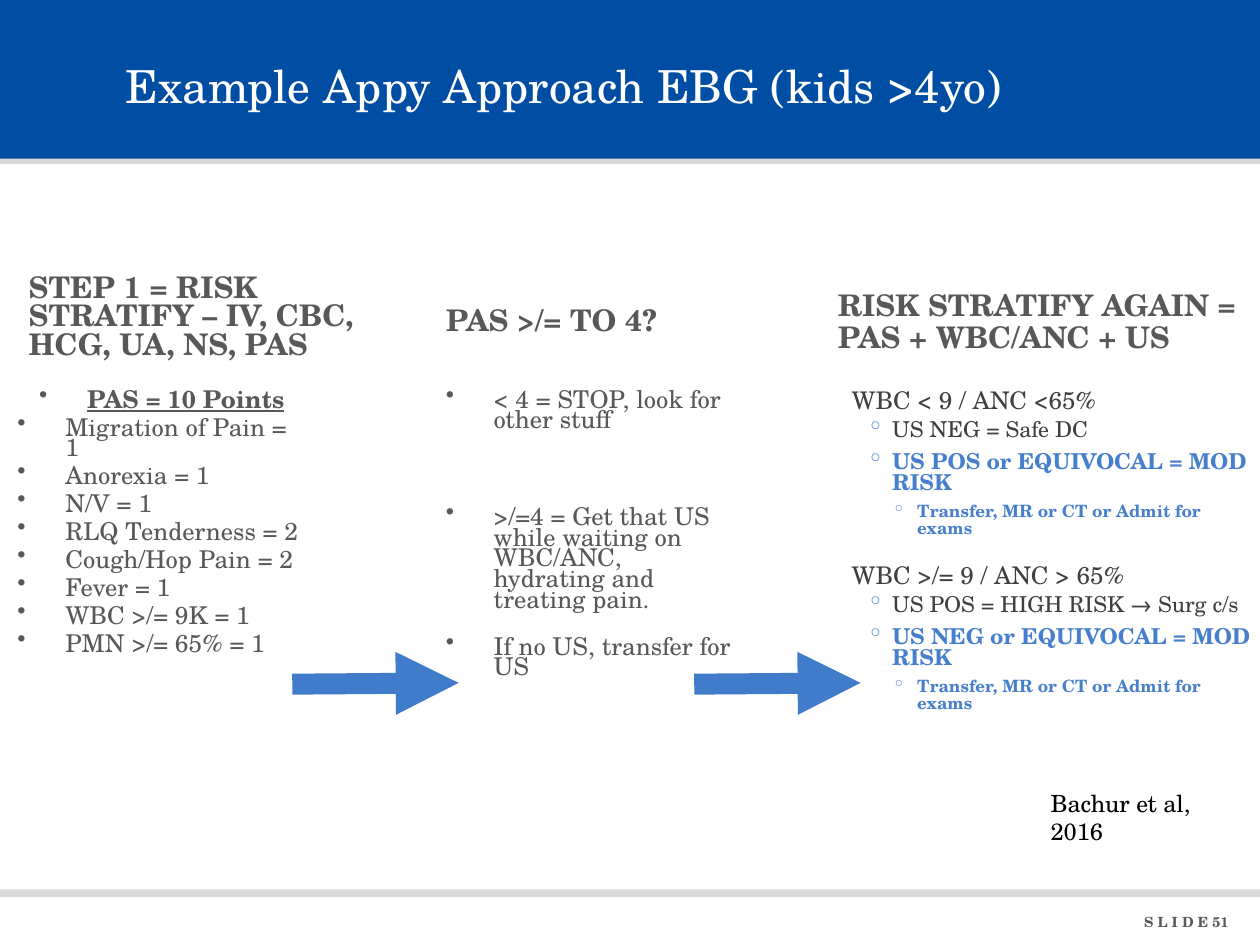
import pptx
import pptx.dml.color
import pptx.enum.shapes
import pptx.enum.text
import pptx.oxml.ns
import pptx.util
from dataclasses import dataclass
from lxml import etree

ALIGN = pptx.enum.text.PP_ALIGN
ANCHOR = pptx.enum.text.MSO_ANCHOR
qn = pptx.oxml.ns.qn


@dataclass(frozen=True)
class Theme:
    font: str = "TeX Gyre Schola"
    blue: str = "004DA4"
    rule: str = "DAD9D9"
    gray: str = "585858"
    dark: str = "404040"
    accent: str = "467FCC"
    arrow: str = "417CCB"
    white: str = "FFFFFF"
    black: str = "000000"
    title: float = 26
    heading: float = 17
    item: float = 14
    group: float = 13.9
    credit: float = 13.5
    finding: float = 12.5
    action: float = 9.7
    footer: float = 8


@dataclass(frozen=True)
class Area:
    col: float
    row: float
    cols: float
    rows: float


@dataclass(frozen=True)
class Entry:
    text: str
    look: dict


@dataclass(frozen=True)
class Panel:
    area: Area
    entries: list[Entry]
    anchor: ANCHOR = ANCHOR.TOP
    margins: tuple[float, float] = (0.1, 0.05)


THEME = Theme()
COLUMNS, ROWS = 100, 75
deck = pptx.Presentation()
deck.slide_width, deck.slide_height = pptx.util.Inches(10), pptx.util.Inches(7.5)
slide = deck.slides.add_slide(deck.slide_layouts[6])


def across(cols: float) -> int:
    return round(deck.slide_width * cols / COLUMNS)


def down(rows: float) -> int:
    return round(deck.slide_height * rows / ROWS)


def place(area: Area) -> tuple[int, int, int, int]:
    return across(area.col), down(area.row), across(area.cols), down(area.rows)


def rgb(color: str) -> pptx.dml.color.RGBColor:
    return pptx.dml.color.RGBColor.from_string(color)


def write(frame, text: str, *, size: float, color: str = THEME.gray, bold: bool = False,
          underline: bool = False, align: ALIGN = ALIGN.LEFT, spacing: float = 1,
          before: float = 0, after: float = 0, indent: float = 0, hanging: float = 0,
          bullet: str = "", bullet_color: str = "") -> None:
    first = not frame.paragraphs[0].runs
    paragraph = frame.paragraphs[0] if first else frame.add_paragraph()
    paragraph.alignment = align
    paragraph.line_spacing = spacing
    paragraph.space_before = pptx.util.Pt(0 if first else before)
    paragraph.space_after = pptx.util.Pt(after)
    properties = paragraph._p.get_or_add_pPr()
    properties.set("marL", str(pptx.util.Inches(indent)))
    properties.set("indent", str(-pptx.util.Inches(hanging)))
    if bullet_color:
        tint = etree.SubElement(properties, qn("a:buClr"))
        etree.SubElement(tint, qn("a:srgbClr"), val=bullet_color)
    if bullet:
        etree.SubElement(properties, qn("a:buChar"), char=bullet)
    run = paragraph.add_run()
    run.text = text
    font = run.font
    font.name, font.size = THEME.font, pptx.util.Pt(size)
    font.bold, font.underline = bold, underline
    font.color.rgb = rgb(color)


def draw_panel(panel: Panel) -> None:
    frame = slide.shapes.add_textbox(*place(panel.area)).text_frame
    frame.word_wrap = True
    frame.vertical_anchor = panel.anchor
    side, edge = map(pptx.util.Inches, panel.margins)
    frame.margin_left = frame.margin_right = side
    frame.margin_top = frame.margin_bottom = edge
    for entry in panel.entries:
        write(frame, entry.text, **entry.look)


def draw_band(area: Area, color: str) -> None:
    band = slide.shapes.add_shape(pptx.enum.shapes.MSO_SHAPE.RECTANGLE, *place(area))
    band.shadow.inherit = False
    band.fill.solid()
    band.fill.fore_color.rgb = rgb(color)
    band.line.fill.background()


def draw_arrow(col: float, row: float, cols: float, rise: float) -> None:
    arrow = slide.shapes.add_connector(
        pptx.enum.shapes.MSO_CONNECTOR.STRAIGHT,
        across(col), down(row), across(col + cols), down(row - rise))
    arrow.line.color.rgb = rgb(THEME.arrow)
    arrow.line.width = pptx.util.Pt(12)
    etree.SubElement(arrow.line._get_or_add_ln(), qn("a:tailEnd"), type="triangle")
    etree.SubElement(arrow._element.spPr, qn("a:effectLst"))


HEADING = dict(size=THEME.heading, bold=True, spacing=0.8)
ITEM = dict(size=THEME.item, spacing=0.7, before=4.2, indent=0.38, hanging=0.38, bullet="•")
GROUP = dict(size=THEME.group, color=THEME.dark, spacing=0.8, before=12, after=2, indent=0.1)
FINDING = dict(size=THEME.finding, color=THEME.dark, spacing=0.8, before=2, after=4,
               indent=0.42, hanging=0.2, bullet="◦", bullet_color=THEME.accent)
RISK = FINDING | dict(color=THEME.accent, bold=True)
ACTION = RISK | dict(size=THEME.action, indent=0.62)

HEADING_ROW, BODY_ROW, BODY_ROWS = 20.8, 30.6, 27.7
STEP_COL, SCORE_COL, CUTOFF_COL, RISK_COL = 1.3, 0.4, 34.4, 66.6
BODY_COLS = 24.9

score_items = ["Migration of Pain = 1", "Anorexia = 1", "N/V = 1", "RLQ Tenderness = 2",
               "Cough/Hop Pain = 2", "Fever = 1", "WBC >/= 9K = 1", "PMN >/= 65% = 1"]
risk_groups = [
    ("WBC < 9 / ANC <65%", "US NEG = Safe DC", "US POS or EQUIVOCAL = MOD RISK"),
    ("WBC >/= 9 / ANC > 65%", "US POS = HIGH RISK → Surg c/s",
     "US NEG or EQUIVOCAL = MOD RISK"),
]
risk_entries = [
    Entry(text, look)
    for group in risk_groups
    for text, look in zip((*group, "Transfer, MR or CT or Admit for exams"),
                          (GROUP, FINDING, RISK, ACTION))
]

panels = [
    Panel(Area(84.3, 72, 14.2, 2.3),
          [Entry("S L I D E 51", dict(size=THEME.footer, bold=True, align=ALIGN.RIGHT))]),
    Panel(Area(9, 0.8, 82.5, 11.9),
          [Entry("Example Appy Approach EBG (kids >4yo)",
                 dict(size=THEME.title, color=THEME.white))], ANCHOR.MIDDLE),
    Panel(Area(STEP_COL, HEADING_ROW, 29.3, 8.9),
          [Entry("STEP 1 = RISK STRATIFY – IV, CBC, HCG, UA, NS, PAS", HEADING)],
          ANCHOR.MIDDLE),
    Panel(Area(SCORE_COL, BODY_ROW, BODY_COLS, BODY_ROWS),
          [Entry("PAS = 10 Points",
                 ITEM | dict(bold=True, underline=True, align=ALIGN.CENTER)),
           *(Entry(text, ITEM) for text in score_items)]),
    Panel(Area(CUTOFF_COL, HEADING_ROW, BODY_COLS, 9.7),
          [Entry("PAS >/= TO 4?", HEADING)], ANCHOR.MIDDLE),
    Panel(Area(CUTOFF_COL, BODY_ROW, BODY_COLS, BODY_ROWS),
          [Entry("< 4 = STOP, look for other stuff", ITEM | dict(after=39.5)),
           Entry(">/=4 = Get that US while waiting on WBC/ANC, hydrating and treating pain.",
                 ITEM | dict(after=11)),
           Entry("If no US, transfer for US", ITEM)]),
    Panel(Area(65.8, HEADING_ROW, 34.2, 9.7),
          [Entry("RISK STRATIFY AGAIN = PAS + WBC/ANC + US",
                 HEADING | dict(spacing=0.9, after=2))], ANCHOR.MIDDLE, (0.07, 0.04)),
    Panel(Area(RISK_COL, BODY_ROW, 33.4, BODY_ROWS), risk_entries, margins=(0, 0.04)),
    Panel(Area(82.4, 62.1, 15.9, 3.3),
          [Entry("Bachur et al, 2016", dict(size=THEME.credit, color=THEME.black))]),
]

draw_band(Area(0, 10.5, COLUMNS, 2.5), THEME.rule)
draw_band(Area(0, 0, COLUMNS, 12.6), THEME.blue)
draw_band(Area(0, 70.6, COLUMNS, 0.6), THEME.rule)
for panel in panels:
    draw_panel(panel)
for arrow_col in (23.2, 55.1):
    draw_arrow(arrow_col, 54.3, 13.2, 0.1)

deck.save("out.pptx")
